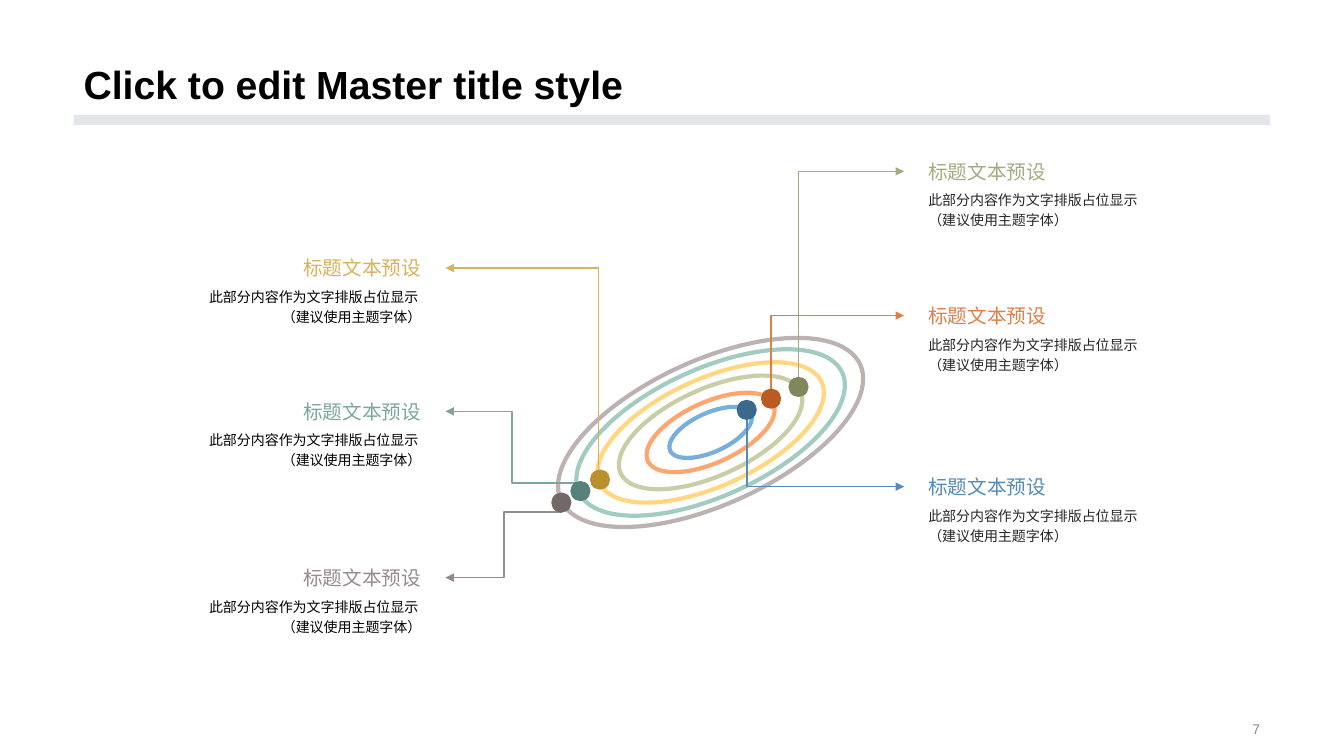
from lxml.etree import SubElement
from pptx import Presentation
from pptx.dml.color import RGBColor as Color
from pptx.enum.shapes import MSO_CONNECTOR as Link, MSO_SHAPE as Shape
from pptx.enum.text import MSO_ANCHOR as Anchor, PP_ALIGN as Align
from pptx.oxml.ns import qn
from pptx.util import Pt

BLACK = Color(0x00, 0x00, 0x00)
DARK = Color(0x26, 0x26, 0x26)
GREY = Color(0x8C, 0x8C, 0x8C)
BAR = Color(0xE4, 0xE6, 0xEA)
TAUPE = Color(0x96, 0x8C, 0x8C)
TEAL = Color(0x7B, 0xA7, 0x9D)
GOLD = Color(0xD8, 0xB2, 0x5C)
OLIVE = Color(0xA5, 0xAB, 0x81)
RUST = Color(0xDD, 0x80, 0x47)
BLUE = Color(0x54, 0x8B, 0xB7)
TAUPE_DOT = Color(0x72, 0x68, 0x68)
TEAL_DOT = Color(0x57, 0x82, 0x79)
GOLD_DOT = Color(0xBA, 0x8F, 0x2D)
OLIVE_DOT = Color(0x81, 0x87, 0x5A)
RUST_DOT = Color(0xB9, 0x5B, 0x22)
BLUE_DOT = Color(0x3B, 0x69, 0x8D)
TAUPE_RING = Color(0xBC, 0xB2, 0xB2)
TEAL_RING = Color(0xA2, 0xCC, 0xC2)
GOLD_RING = Color(0xFF, 0xD7, 0x80)
OLIVE_RING = Color(0xC8, 0xCE, 0xA6)
RUST_RING = Color(0xFF, 0xA5, 0x70)
BLUE_RING = Color(0x77, 0xAE, 0xDC)

HEAD = "标题文本预设"
BODY = "此部分内容作为文字排版占位显示 \v（建议使用主题字体）"


class Deck:
    font = "Arial"
    mid = (507.6, 308.9)
    tilt = -24.4
    squash = 0.44
    dot_size = 14.4

    def __init__(self, slide):
        self.shapes = slide.shapes

    def block(self, kind, x, y, w, h, color):
        shape = self.shapes.add_shape(kind, Pt(x), Pt(y), Pt(w), Pt(h))
        shape.shadow.inherit = False
        shape.fill.solid()
        shape.fill.fore_color.rgb = color
        shape.line.fill.background()
        return shape

    def text(self, text, x, y, w, h, size, color, align=Align.LEFT,
             anchor=Anchor.MIDDLE, pads=(7.2, 3.6, 7.2, 3.6), space=1.0, bold=False):
        frame = self.shapes.add_textbox(Pt(x), Pt(y), Pt(w), Pt(h)).text_frame
        frame.word_wrap = True
        frame.vertical_anchor = anchor
        frame.margin_left, frame.margin_top, frame.margin_right, frame.margin_bottom = map(Pt, pads)
        para = frame.paragraphs[0]
        para.text = text
        para.alignment = align
        para.line_spacing = space
        para.font.name = self.font
        para.font.size = Pt(size)
        para.font.bold = bold
        para.font.color.rgb = color

    def ring(self, w, color):
        h = w * self.squash
        oval = self.block(Shape.OVAL, self.mid[0] - w / 2, self.mid[1] - h / 2, w, h, color)
        oval.rotation = self.tilt
        oval.fill.background()
        oval.line.color.rgb = color
        oval.line.width = Pt(3)

    def dot(self, x, y, color):
        half = self.dot_size / 2
        self.block(Shape.OVAL, x - half, y - half, self.dot_size, self.dot_size, color)

    def arrow(self, tip, end, bend, color):
        line = self.shapes.add_connector(Link.ELBOW, *map(Pt, tip + end))
        line.line.color.rgb = color
        line.line.width = Pt(1)
        props = line._element.spPr
        guides = props.find(qn("a:prstGeom")).get_or_add_avLst()
        SubElement(guides, qn("a:gd"), name="adj1", fmla=f"val {bend}")
        SubElement(props.find(qn("a:ln")), qn("a:headEnd"), type="triangle")
        SubElement(props, qn("a:effectLst"))

    def label(self, x, y, w, color, ink, align, pads):
        self.text(HEAD, x, y - 12.25, w, 24.5, 14, color, align, pads=pads)
        self.text(BODY, x, y + 12.25, w, 44, 10, ink, align, Anchor.TOP, pads, 1.2)


def main():
    prs = Presentation()
    prs.slide_width, prs.slide_height = Pt(960), Pt(540)
    deck = Deck(prs.slides.add_slide(prs.slide_layouts[6]))

    deck.block(Shape.RECTANGLE, 52.6, 82.1, 854.6, 7.2, BAR)
    deck.text("Click to edit Master title style", 52.6, 0, 854.6, 80.6, 28, BLACK,
              anchor=Anchor.BOTTOM, space=0.9, bold=True)
    deck.text("7", 678.2, 512.6, 229, 16.6, 10, GREY, Align.RIGHT)

    rings = [(234.7, TAUPE_RING), (206.6, TEAL_RING), (174.2, GOLD_RING),
             (141.1, OLIVE_RING), (98.6, RUST_RING), (63.4, BLUE_RING)]
    for width, color in rings:
        deck.ring(width, color)

    left, right = 318.2, 645.8
    items = [
        (left, 191.5, (427.7, 335.5), 100000, GOLD, (428.6, 342.6), GOLD_DOT),
        (left, 293.8, (413.3, 344.9), 50000, TEAL, (414.6, 350.8), TEAL_DOT),
        (left, 412.6, (401.8, 365.8), 50000, TAUPE, (401, 359), TAUPE_DOT),
        (right, 122.4, (570.2, 269.3), 100000, OLIVE, (570.4, 276.4), OLIVE_DOT),
        (right, 225.4, (550.8, 277.9), 100000, RUST, (550.8, 284.8), RUST_DOT),
        (right, 347.6, (533.5, 299.5), 100000, BLUE, (533.4, 292.8), BLUE_DOT),
    ]
    for x, y, end, bend, color, spot, dark in items:
        deck.arrow((x, y), end, bend, color)
        deck.dot(*spot, dark)
        if x == left:
            deck.label(88.6, y, 229.6, color, BLACK, Align.RIGHT, (0, 0, 17.3, 0))
        else:
            deck.label(x, y, 201.6, color, DARK, Align.LEFT, (17.3, 0, 0, 0))

    prs.save("out.pptx")


if __name__ == "__main__":
    main()
